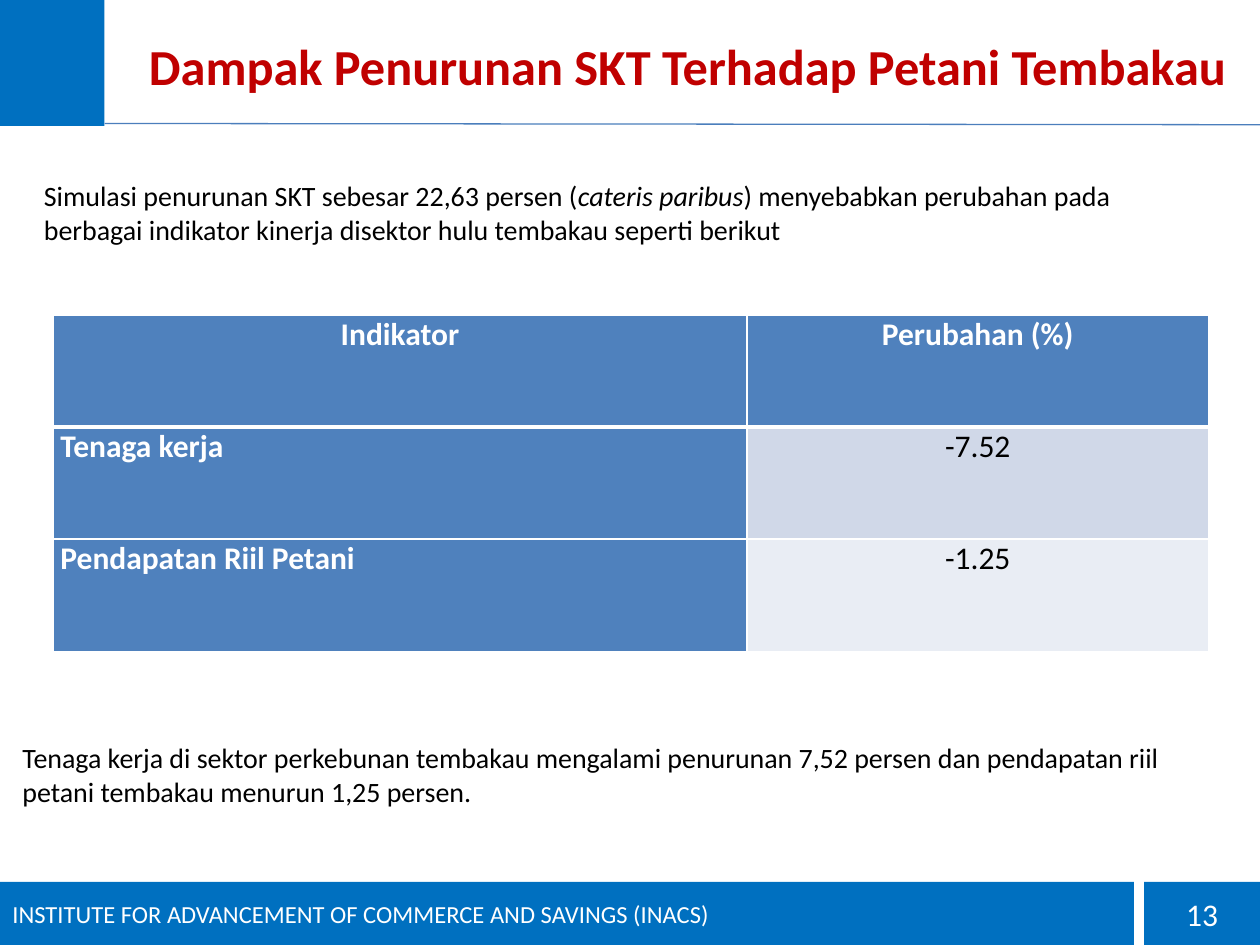
from dataclasses import dataclass

import pptx
import pptx.dml.color
import pptx.enum.shapes
import pptx.enum.text
import pptx.oxml.ns
import pptx.util
from lxml import etree
from pptx.dml.color import RGBColor
from pptx.enum.text import MSO_ANCHOR, MSO_AUTO_SIZE, PP_ALIGN
from pptx.util import Inches, Pt

BLUE = RGBColor(0x00, 0x70, 0xC0)
RULE_BLUE = RGBColor(0x4B, 0x7E, 0xBC)
HEADER_BLUE = RGBColor(0x4F, 0x81, 0xBD)
BAND_DARK = RGBColor(0xD0, 0xD8, 0xE8)
BAND_LIGHT = RGBColor(0xE9, 0xED, 0xF4)
RED = RGBColor(0xC0, 0x00, 0x00)
WHITE = RGBColor(0xFF, 0xFF, 0xFF)
BLACK = RGBColor(0x00, 0x00, 0x00)


@dataclass(frozen=True)
class Box:
    left: float
    top: float
    width: float
    height: float

    def lengths(self) -> tuple:
        return tuple(Inches(v) for v in (self.left, self.top, self.width, self.height))


@dataclass(frozen=True)
class Indicator:
    name: str
    change: str
    band: RGBColor


INDICATORS = (
    Indicator("Tenaga kerja", "-7.52", BAND_DARK),
    Indicator("Pendapatan Riil Petani", "-1.25", BAND_LIGHT),
)
COLUMN_WIDTHS = (5.51, 3.66)
TABLE_BOX = Box(0.42, 2.5, sum(COLUMN_WIDTHS), 2.67)


def write(frame, text: str, *, size: float, color: RGBColor, bold: bool = False,
          align=PP_ALIGN.LEFT, space_before: float = 0) -> None:
    """Fill the frame with one paragraph; parts between asterisks are italic."""
    paragraph = frame.paragraphs[0]
    paragraph.alignment = align
    paragraph.space_before = Pt(space_before)
    for index, part in enumerate(text.split("*")):
        run = paragraph.add_run()
        run.text = part
        run.font.name = "Calibri"
        run.font.size = Pt(size)
        run.font.bold = bold
        run.font.italic = index % 2 == 1
        run.font.color.rgb = color


def add_text(slide, box: Box, text: str, *, grow: bool = False,
             anchor=MSO_ANCHOR.TOP, **text_format) -> None:
    frame = slide.shapes.add_textbox(*box.lengths()).text_frame
    frame.word_wrap = True
    frame.vertical_anchor = anchor
    frame.auto_size = MSO_AUTO_SIZE.SHAPE_TO_FIT_TEXT if grow else MSO_AUTO_SIZE.NONE
    write(frame, text, **text_format)


def add_block(slide, box: Box, text: str = "", **text_format) -> None:
    block = slide.shapes.add_shape(pptx.enum.shapes.MSO_SHAPE.RECTANGLE, *box.lengths())
    block.shadow.inherit = False
    block.fill.solid()
    block.fill.fore_color.rgb = BLUE
    block.line.fill.background()
    if text:
        block.text_frame.word_wrap = True
        block.text_frame.vertical_anchor = MSO_ANCHOR.MIDDLE
        write(block.text_frame, text, color=WHITE, **text_format)


def add_header_rule(slide) -> None:
    rule = slide.shapes.add_connector(
        pptx.enum.shapes.MSO_CONNECTOR.STRAIGHT,
        Inches(0.83), Inches(0.98), Inches(10), Inches(0.99))
    rule.line.color.rgb = RULE_BLUE
    rule.line.width = Pt(0.75)
    etree.SubElement(rule._element.spPr, pptx.oxml.ns.qn("a:effectLst"))


def set_borders(cell, *, top: float = 1, bottom: float = 1) -> None:
    """Draw white cell borders; the widths are in points."""
    qn = pptx.oxml.ns.qn
    properties = cell._tc.get_or_add_tcPr()
    sides = (("a:lnL", 1), ("a:lnR", 1), ("a:lnT", top), ("a:lnB", bottom))
    for position, (side, width) in enumerate(sides):
        border = etree.Element(qn(side), w=str(Pt(width)))
        fill = etree.SubElement(border, qn("a:solidFill"))
        etree.SubElement(fill, qn("a:srgbClr"), val=str(WHITE))
        properties.insert(position, border)


def fill_cell(cell, text: str, fill: RGBColor, *, top: float = 1, bottom: float = 1,
              **text_format) -> None:
    cell.margin_left = cell.margin_right = Inches(0.06)
    cell.margin_top = cell.margin_bottom = 0
    cell.fill.solid()
    cell.fill.fore_color.rgb = fill
    set_borders(cell, top=top, bottom=bottom)
    write(cell.text_frame, text, size=18, space_before=6, **text_format)


def add_indicator_table(slide) -> None:
    row_count = len(INDICATORS) + 1
    table = slide.shapes.add_table(
        row_count, len(COLUMN_WIDTHS), *TABLE_BOX.lengths()).table
    for column, width in zip(table.columns, COLUMN_WIDTHS):
        column.width = Inches(width)
    for row in table.rows:
        row.height = Inches(TABLE_BOX.height / row_count)
    for column, heading in enumerate(("Indikator", "Perubahan (%)")):
        fill_cell(table.cell(0, column), heading, HEADER_BLUE, bottom=3,
                  color=WHITE, bold=True, align=PP_ALIGN.CENTER)
    for row, indicator in enumerate(INDICATORS, start=1):
        top = 3 if row == 1 else 1
        fill_cell(table.cell(row, 0), indicator.name, HEADER_BLUE, top=top,
                  color=WHITE, bold=True)
        fill_cell(table.cell(row, 1), indicator.change, indicator.band, top=top,
                  color=BLACK, align=PP_ALIGN.CENTER)


def main() -> None:
    deck = pptx.Presentation()
    deck.slide_width, deck.slide_height = Inches(10), Inches(7.5)
    slide = deck.slides.add_slide(deck.slide_layouts[6])

    add_text(slide, Box(1, 0.09, 8.92, 0.85),
             "Dampak Penurunan SKT Terhadap Petani Tembakau",
             anchor=MSO_ANCHOR.MIDDLE, size=28.8, color=RED, bold=True,
             align=PP_ALIGN.CENTER)
    add_indicator_table(slide)
    add_text(slide, Box(0.25, 1.37, 9.42, 0.64),
             "Simulasi penurunan SKT sebesar 22,63 persen (*cateris paribus*) "
             "menyebabkan perubahan pada berbagai indikator kinerja disektor hulu "
             "tembakau seperti berikut",
             grow=True, size=16, color=BLACK)
    add_text(slide, Box(0.08, 5.83, 9.67, 0.64),
             "Tenaga kerja di sektor perkebunan tembakau mengalami penurunan 7,52 "
             "persen dan pendapatan riil petani tembakau menurun 1,25 persen.",
             grow=True, size=16, color=BLACK)

    add_block(slide, Box(0, 0, 0.83, 1))
    add_header_rule(slide)
    add_block(slide, Box(0, 7, 9, 0.5),
              "INSTITUTE FOR ADVANCEMENT OF COMMERCE AND SAVINGS (INACS)", size=14)
    add_block(slide, Box(9.08, 7, 0.92, 0.5), "13", size=18, align=PP_ALIGN.CENTER)

    deck.save("out.pptx")


if __name__ == "__main__":
    main()
